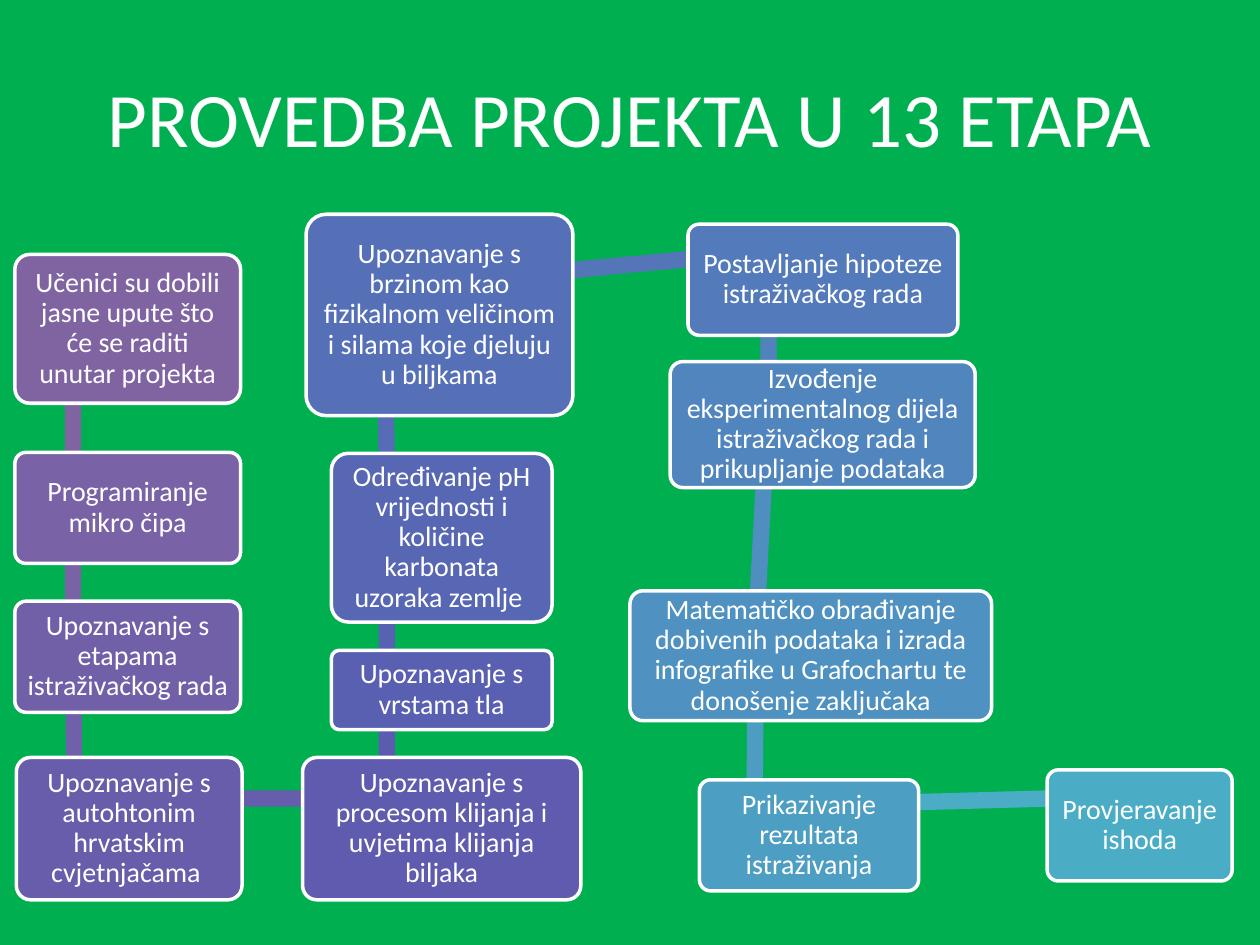
import colorsys
import math
from itertools import pairwise

from pptx import Presentation
from pptx.dml.color import RGBColor
from pptx.enum import shapes, text
from pptx.util import Cm, Pt

FONT = {"name": "Calibri", "size": Pt(16)}
FRAME = {"word_wrap": True, "vertical_anchor": text.MSO_ANCHOR.MIDDLE}
INSET = {f"margin_{side}": Cm(0.18) for side in ("left", "top", "right", "bottom")}
PARA = {"alignment": text.PP_ALIGN.CENTER, "line_spacing": 0.9}
FIRST, LAST = "8064A2", "4BACC6"
THICK = 0.33

# Wording, box (left, top, width, height), joint where the path turns (x, y);
# all in cm from the corner of the flow area.
STEPS = [
    ("Učenici su dobili jasne upute što će se raditi unutar projekta",
     (0.3, 0.81, 4.55, 3), (1.47, 1.75)),
    ("Programiranje mikro čipa",
     (0.3, 4.8, 4.55, 2.24), (1.47, 5.36)),
    ("Upoznavanje s etapama istraživačkog rada",
     (0.3, 7.8, 4.55, 2.24), (1.47, 8.33)),
    ("Upoznavanje s autohtonim hrvatskim cvjetnjačama ",
     (0.33, 10.95, 4.55, 2.87), (1.5, 11.78)),
    ("Upoznavanje s procesom klijanja i uvjetima klijanja biljaka",
     (6.1, 10.95, 5.61, 2.87), (7.8, 11.78)),
    ("Upoznavanje s vrstama tla",
     (6.68, 8.79, 4.45, 1.6), (7.8, 8.99)),
    ("Određivanje pH vrijednosti i količine karbonata uzoraka zemlje ",
     (6.68, 4.82, 4.45, 3.4), (7.8, 5.94)),
    ("Upoznavanje s brzinom kao fizikalnom veličinom i silama koje djeluju u biljkama",
     (6.17, 0, 5.38, 4.06), (7.77, 1.48)),
    ("Postavljanje hipoteze istraživačkog rada",
     (13.87, 0.2, 5.44, 2.24), (15.49, 0.75)),
    ("Izvođenje eksperimentalnog dijela istraživačkog rada i prikupljanje podataka",
     (13.51, 2.97, 6.15, 2.54), (15.49, 3.68)),
    ("Matematičko obrađivanje dobivenih podataka i izrada infografike u "
     "Grafochartu te donošenje zaključaka",
     (12.7, 7.59, 7.29, 2.62), (15.24, 8.34)),
    ("Prikazivanje rezultata istraživanja",
     (14.1, 11.4, 4.42, 2.24), (15.21, 11.94)),
    ("Provjeravanje ishoda",
     (21.11, 11.2, 3.73, 2.24), (21.84, 11.76)),
]


def style(item, values):
    for name, value in values.items():
        setattr(item, name, value)


def paint(part, color):
    """Colour a fill or a font."""
    if hasattr(part, "solid"):
        part.solid()
        part.fore_color.rgb = RGBColor.from_string(color)
    else:
        part.color.rgb = RGBColor.from_string(color)


def blend(share):
    """Hex colour at a share of the way from FIRST to LAST, through HLS."""
    ends = [colorsys.rgb_to_hls(*(v / 255 for v in bytes.fromhex(c)))
            for c in (FIRST, LAST)]
    mix = [a + (b - a) * share for a, b in zip(*ends)]
    return "".join(f"{round(v * 255):02X}" for v in colorsys.hls_to_rgb(*mix))


def place(slide, kind, box, color):
    shape = slide.shapes.add_shape(kind, *map(Cm, box))
    shape.shadow.inherit = False
    paint(shape.fill, color)
    return shape


def link(slide, start, end, color):
    """Bar from one joint of the path to the next."""
    (x1, y1), (x2, y2) = start, end
    size = math.dist(start, end)
    box = ((x1 + x2 - size) / 2, (y1 + y2 - THICK) / 2, size, THICK)
    bar = place(slide, shapes.MSO_SHAPE.RECTANGLE, box, color)
    bar.line.fill.background()
    bar.rotation = math.degrees(math.atan2(y2 - y1, x2 - x1)) % 360


def card(slide, box, words, color):
    shape = place(slide, shapes.MSO_SHAPE.ROUNDED_RECTANGLE, box, color)
    shape.adjustments[0] = 0.1
    paint(shape.line, "FFFFFF")
    shape.line.width = Pt(2)
    frame = shape.text_frame
    frame.text = words
    para = frame.paragraphs[0]
    for item, values in ((frame, FRAME | INSET), (para, PARA), (para.font, FONT)):
        style(item, values)
    paint(para.font, "FFFFFF")


def flow(slide, left, top):
    joints = [(left + x, top + y) for _, _, (x, y) in STEPS]
    for i, (start, end) in enumerate(pairwise(joints)):
        link(slide, start, end, blend(i / (len(STEPS) - 2)))
    for i, (words, (x, y, wide, high), _) in enumerate(STEPS):
        card(slide, (left + x, top + y, wide, high), words,
             blend(i / (len(STEPS) - 1)))


def head(slide, box, words):
    title = slide.shapes.title
    style(title, dict(zip(("left", "top", "width", "height"), map(Cm, box))))
    frame = title.text_frame
    frame.text = words
    para = frame.paragraphs[0]
    style(frame, FRAME)
    style(para, {"alignment": text.PP_ALIGN.CENTER})
    style(para.font, FONT | {"size": Pt(44)})
    paint(para.font, "FFFFFF")


def main():
    deck = Presentation()
    style(deck, {"slide_width": Cm(25.4), "slide_height": Cm(19.05)})
    slide = deck.slides.add_slide(deck.slide_layouts[5])
    paint(slide.background.fill, "00B050")
    head(slide, (1.27, 0.76, 22.86, 3.18), "PROVEDBA PROJEKTA U 13 ETAPA")
    flow(slide, 0, 4.32)
    deck.save("out.pptx")


if __name__ == "__main__":
    main()
